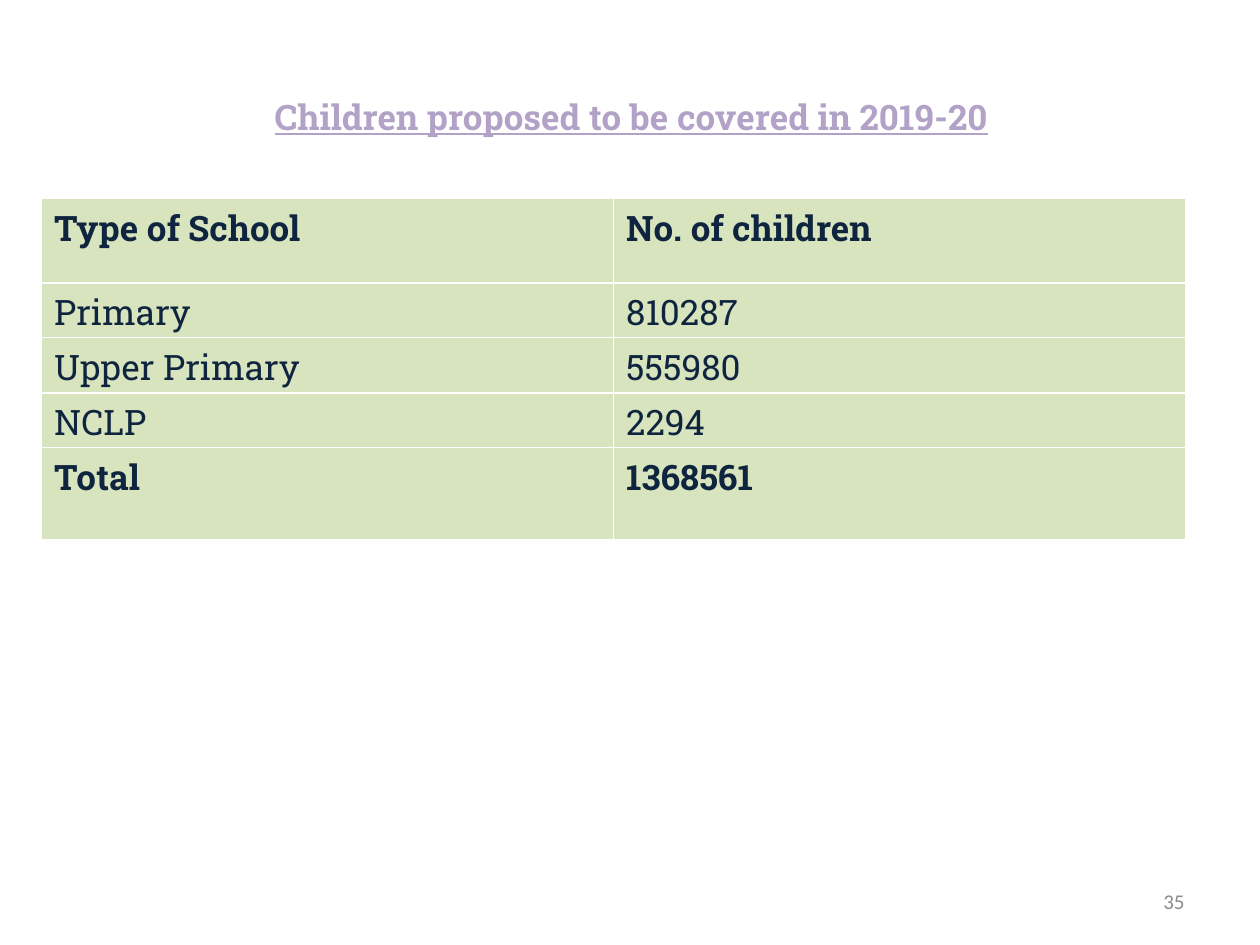
from dataclasses import dataclass

from pptx import Presentation
from pptx.dml.color import RGBColor
from pptx.enum.text import MSO_ANCHOR, PP_ALIGN
from pptx.util import Inches, Pt

MIDDLE = MSO_ANCHOR.MIDDLE
CENTER, RIGHT = PP_ALIGN.CENTER, PP_ALIGN.RIGHT

LILAC = RGBColor(0xB3, 0xA2, 0xC7)
NAVY = RGBColor(0x0F, 0x24, 0x3E)
GREEN = RGBColor(0xD7, 0xE4, 0xBD)
GRAY = RGBColor(0x8C, 0x8C, 0x8C)
SLAB, SANS = "Roboto Slab", "Calibri"

WIDTH, HEIGHT = 10, 7.5
TABLE_HEIGHT = 2.74


@dataclass
class Box:
    left: float
    top: float
    width: float
    height: float

    def emu(self) -> tuple:
        return tuple(Inches(v) for v in (self.left, self.top, self.width, self.height))


@dataclass
class Row:
    school: str
    children: str
    height: float
    bold: bool = False


TITLE_BOX = Box(0.025 * WIDTH, 0.04 * HEIGHT, 0.952 * WIDTH, HEIGHT / 6)
TABLE_BOX = Box(0.033 * WIDTH, 0.21 * HEIGHT, 0.908 * WIDTH, TABLE_HEIGHT)
NUMBER_BOX = Box(0.717 * WIDTH, 0.927 * HEIGHT, 0.233 * WIDTH, 0.053 * HEIGHT)

ROWS = [
    Row("Type of School", "No. of children", 0.67, True),
    Row("Primary", "810287", 0.40),
    Row("Upper Primary", "555980", 0.44),
    Row("NCLP", "2294", 0.39),
    Row("Total", "1368561", 0.73, True),
]


def style(p, name: str, size: int, color: RGBColor, bold: bool = False) -> None:
    p.font.name = name
    p.font.size = Pt(size)
    p.font.color.rgb = color
    p.font.bold = bold


def add_title(s, text: str, box: Box) -> None:
    sp = s.shapes.title
    sp.left, sp.top, sp.width, sp.height = box.emu()
    tf = sp.text_frame
    tf.text = text
    tf.vertical_anchor = MIDDLE
    p = tf.paragraphs[0]
    p.alignment = CENTER
    style(p, SLAB, 20, LILAC, True)
    p.font.underline = True


def add_number(s, text: str, box: Box) -> None:
    tf = s.shapes.add_textbox(*box.emu()).text_frame
    tf.word_wrap = True
    tf.vertical_anchor = MIDDLE
    tf.text = text
    p = tf.paragraphs[0]
    p.alignment = RIGHT
    style(p, SANS, 12, GRAY)


def add_school_table(s, rows: list[Row], box: Box) -> None:
    frame = s.shapes.add_table(len(rows), 2, *box.emu())
    table = frame.table
    table.horz_banding = False
    for line, row in zip(table.rows, rows):
        line.height = Inches(row.height)
        for cell, text in zip(line.cells, (row.school, row.children)):
            cell.text = text
            cell.fill.solid()
            cell.fill.fore_color.rgb = GREEN
            style(cell.text_frame.paragraphs[0], SLAB, 20, NAVY, row.bold)
    frame.height = Inches(box.height)


def main() -> None:
    prs = Presentation()
    prs.slide_width, prs.slide_height = Inches(WIDTH), Inches(HEIGHT)
    s = prs.slides.add_slide(prs.slide_layouts.get_by_name("Title Only"))
    add_title(s, "Children proposed to be covered in 2019-20", TITLE_BOX)
    add_number(s, "35", NUMBER_BOX)
    add_school_table(s, ROWS, TABLE_BOX)
    prs.save("out.pptx")


if __name__ == "__main__":
    main()
